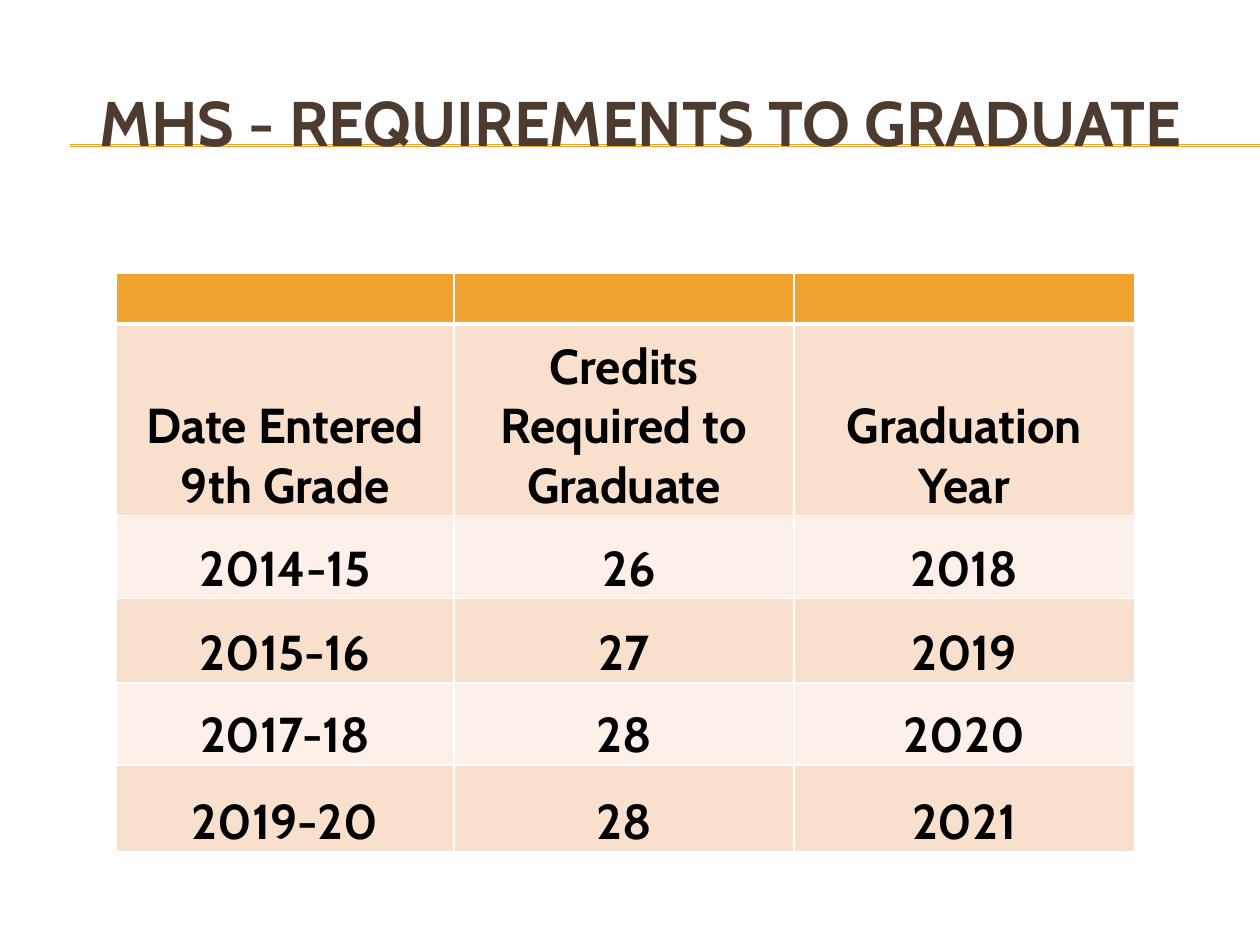
from dataclasses import dataclass

from lxml.etree import SubElement
from pptx import Presentation
from pptx.dml.color import RGBColor as Rgb
from pptx.enum.shapes import MSO_CONNECTOR as Link
from pptx.enum.text import MSO_ANCHOR as Anchor, PP_ALIGN as Align
from pptx.oxml.ns import qn
from pptx.slide import Slide
from pptx.table import _Cell as Cell
from pptx.text.text import TextFrame as Frame
from pptx.util import Cm, Pt

FONT = "Cabin"
HUES = {
    "gold": "F0A22E",
    "brown": "4E3B30",
    "peach": "F9E0CD",
    "cream": "FCF0E8",
    "black": "000000",
    "white": "FFFFFF",
}


@dataclass
class Row:
    high: float
    fill: str
    texts: tuple[str, str, str]
    base: float = 1


COLS = (6.81, 6.86, 6.86)
ROWS = (
    Row(1.02, "gold", ("", "", ""), 3),
    Row(3.86, "peach", ("Date Entered 9th Grade", "Credits Required to Graduate", "Graduation Year")),
    Row(1.68, "cream", ("2014-15", " 26", "2018")),
    Row(1.7, "peach", ("2015-16", "27", "2019")),
    Row(1.65, "cream", ("2017-18", "28", "2020")),
    Row(1.75, "peach", ("2019-20", "28", "2021")),
)


def tint(name: str) -> Rgb:
    return Rgb.from_string(HUES[name])


def write(frame: Frame, text: str, size: float, hue: str) -> None:
    frame.text = text
    para = frame.paragraphs[0]
    para.alignment = Align.CENTER
    for run in para.runs:
        font = run.font
        font.name = FONT
        font.size = Pt(size)
        font.bold = True
        font.color.rgb = tint(hue)


def rule(slide: Slide, top: float) -> None:
    line = slide.shapes.add_connector(Link.STRAIGHT, Cm(1.42), Cm(top), Cm(25.4), Cm(top))
    line.line.color.rgb = tint("gold")
    line.line.width = Pt(0.75)
    SubElement(line._element.spPr, qn("a:effectLst"))


def title(slide: Slide, text: str) -> None:
    box = slide.shapes.add_textbox(Cm(0.84), Cm(1.27), Cm(24.13), Cm(2.34))
    frame = box.text_frame
    frame.word_wrap = True
    frame.vertical_anchor = Anchor.MIDDLE
    write(frame, text, 36, "brown")


def edge(cell: Cell, base: float) -> None:
    props = cell._tc.get_or_add_tcPr()
    for side, width in {"L": 1, "R": 1, "T": 1, "B": base}.items():
        line = SubElement(props, qn(f"a:ln{side}"), w=str(Pt(width)))
        fill = SubElement(line, qn("a:solidFill"))
        SubElement(fill, qn("a:srgbClr"), val=HUES["white"])


def paint(cell: Cell, text: str, row: Row) -> None:
    cell.margin_left = cell.margin_right = cell.margin_top = Cm(0.03)
    cell.margin_bottom = 0
    cell.vertical_anchor = Anchor.BOTTOM
    edge(cell, row.base)
    cell.fill.solid()
    cell.fill.fore_color.rgb = tint(row.fill)
    write(cell.text_frame, text, 28, "black")


def grid(slide: Slide) -> None:
    wide, high = sum(COLS), sum(row.high for row in ROWS)
    table = slide.shapes.add_table(
        len(ROWS), len(COLS), Cm(2.34), Cm(5.51), Cm(wide), Cm(high)
    ).table
    for col, width in zip(table.columns, COLS):
        col.width = Cm(width)
    for line, row in zip(table.rows, ROWS):
        line.height = Cm(row.high)
        for cell, text in zip(line.cells, row.texts):
            paint(cell, text, row)


def main() -> None:
    deck = Presentation()
    deck.slide_width, deck.slide_height = Cm(25.4), Cm(19.05)
    slide = deck.slides.add_slide(deck.slide_layouts[6])
    for top in (2.92, 2.95):
        rule(slide, top)
    title(slide, "MHS - REQUIREMENTS TO GRADUATE")
    grid(slide)
    deck.save("out.pptx")


if __name__ == "__main__":
    main()
